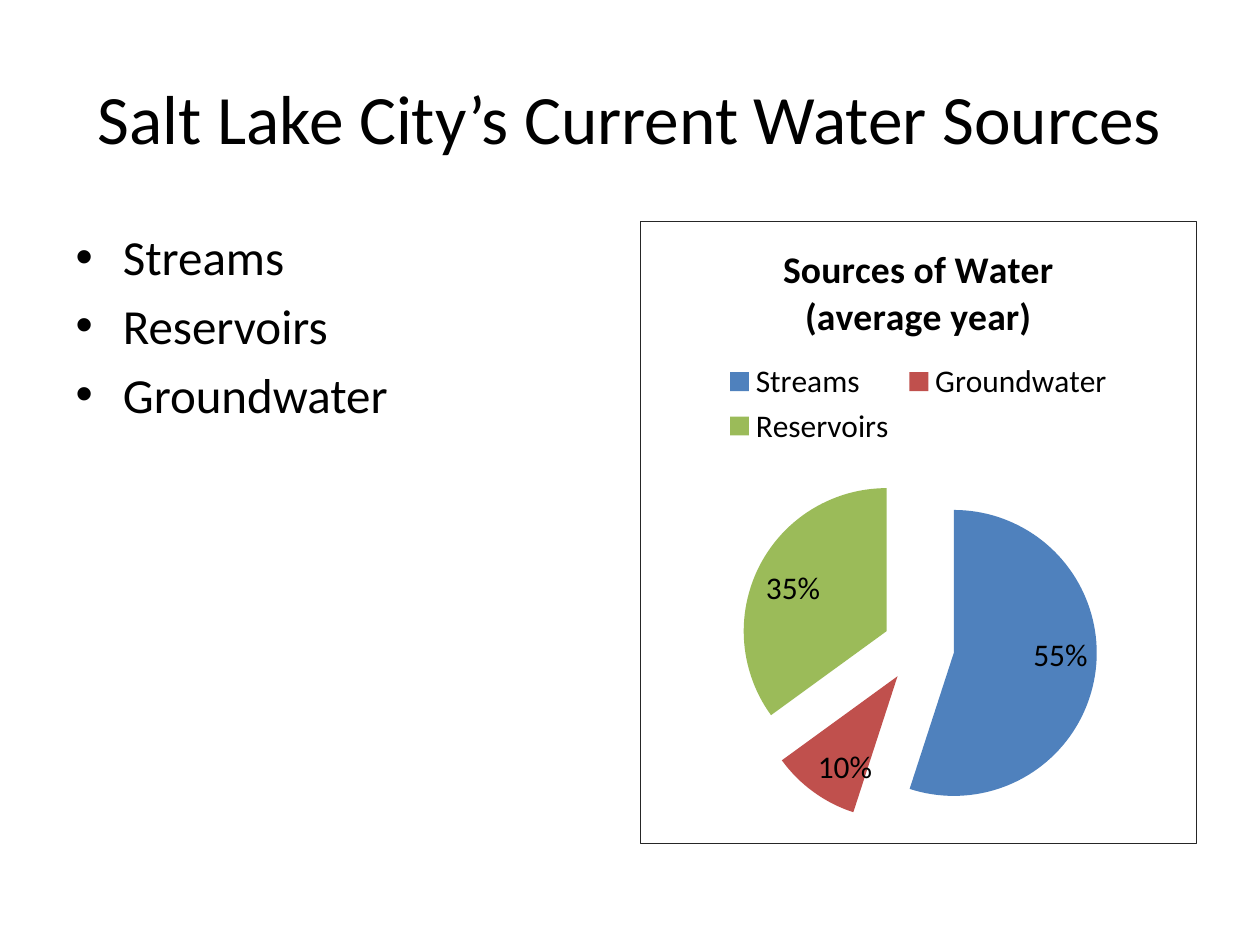
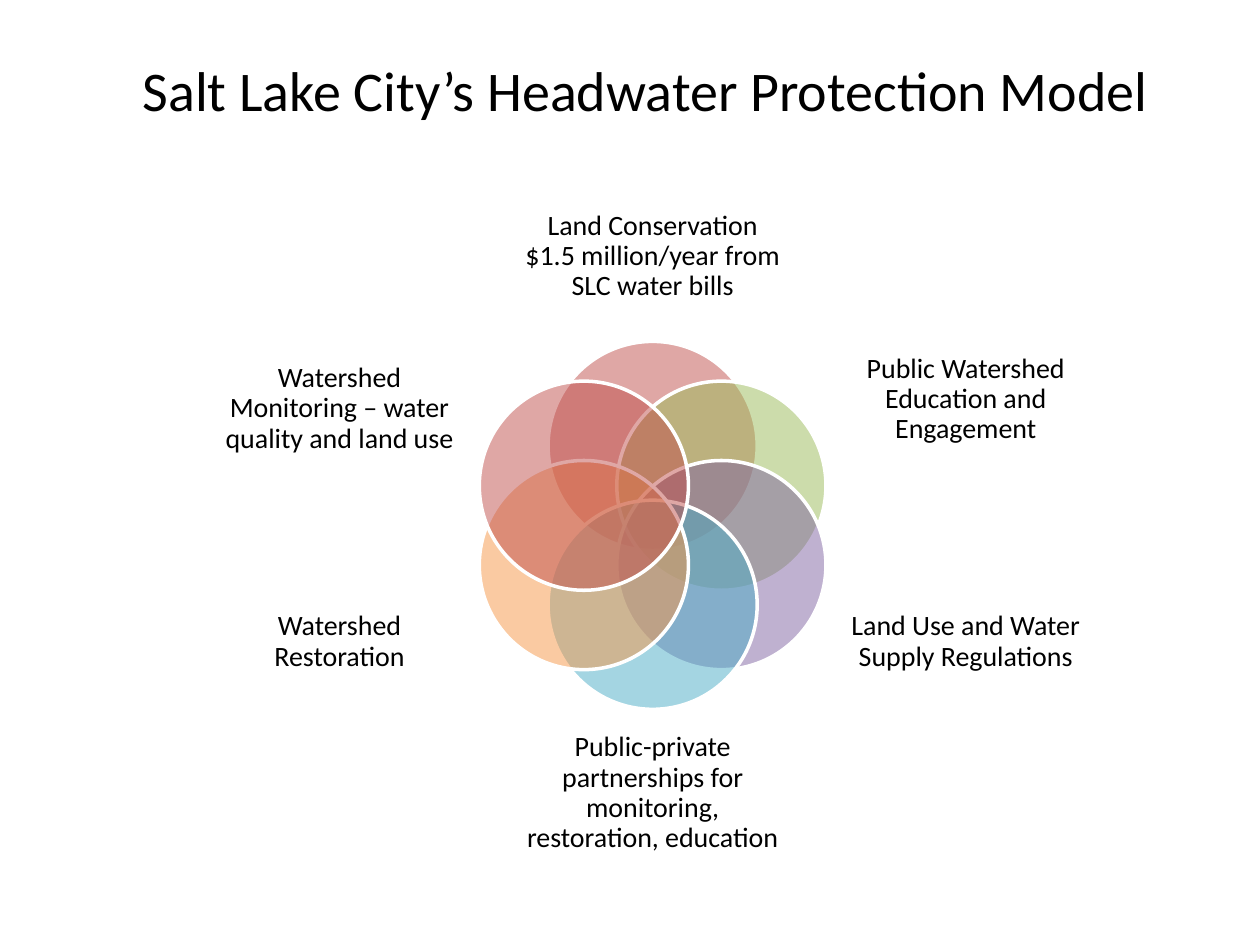
import math

import pptx
import pptx.chart.data
import pptx.dml.color
import pptx.enum.chart
import pptx.enum.shapes
import pptx.enum.text
import pptx.oxml
import pptx.oxml.ns
import pptx.util
from pptx.dml.color import RGBColor

Inches, Pt = pptx.util.Inches, pptx.util.Pt
qn = pptx.oxml.ns.qn
ANCHOR = pptx.enum.text.MSO_ANCHOR
ALIGN = pptx.enum.text.PP_ALIGN

# Shared style
FONT = "Calibri"
BLACK = RGBColor(0x00, 0x00, 0x00)
WHITE = RGBColor(0xFF, 0xFF, 0xFF)
BORDER = RGBColor(0x26, 0x26, 0x26)
BLUE = RGBColor(0x4F, 0x81, 0xBD)
RED = RGBColor(0xC0, 0x50, 0x4D)
GREEN = RGBColor(0x9B, 0xBB, 0x59)
PURPLE = RGBColor(0x80, 0x64, 0xA2)
AQUA = RGBColor(0x4B, 0xAC, 0xC6)
ORANGE = RGBColor(0xF7, 0x96, 0x46)

# Content: water sources
SOURCES_TITLE = "Salt Lake City’s Current Water Sources"
SOURCES = ["Streams", "Reservoirs", "Groundwater"]
CHART_TITLE = ["Sources of Water", "(average year)"]
SHARES = [("Streams", 55, BLUE), ("Groundwater", 10, RED), ("Reservoirs", 35, GREEN)]
EXPLOSION = 25

# Content: protection model, clockwise from the top
# (label, circle colour, column, top and height of the label)
MODEL_TITLE = "Salt Lake City’s Headwater Protection Model"
MODEL = [
    ("Land Conservation $1.5 million/year from SLC water bills", RED, "middle", 1.47, 1.13),
    ("Public Watershed Education and Engagement", GREEN, "right", 2.55, 1.24),
    ("Land Use and Water Supply Regulations", PURPLE, "right", 4.4, 1.39),
    ("Public-private partnerships for monitoring, restoration, education",
     AQUA, "middle", 5.73, 1.13),
    ("Watershed Restoration", ORANGE, "left", 4.4, 1.39),
    ("Watershed Monitoring – water quality and land use", RED, "left", 2.55, 1.39),
]

# Layout in inches
MARGIN, BODY_TOP, BODY_HEIGHT = 0.5, 1.75, 4.95
COLUMN_WIDTH, COLUMN_GAP = 4.42, 0.16
LABEL_COLUMNS = {"left": (1.71, 1.97), "middle": (4.14, 2.08), "right": (6.68, 1.97)}
RING_X, RING_Y, RING_RADIUS = 5.18, 4.17, 0.63
CIRCLE_SIZE = 1.66


def place(shape, left, top, width, height):
    shape.left, shape.top = Inches(left), Inches(top)
    shape.width, shape.height = Inches(width), Inches(height)


def set_font(font, size, bold=None):
    font.name, font.size, font.bold = FONT, Pt(size), bold
    font.color.rgb = BLACK


def add_titled_slide(presentation, layout, title, size, top, width):
    slide = presentation.slides.add_slide(presentation.slide_layouts[layout])
    place(slide.shapes.title, MARGIN, top, width, 1.25)
    frame = slide.shapes.title.text_frame
    frame.text = title
    frame.auto_size = pptx.enum.text.MSO_AUTO_SIZE.NONE
    frame.vertical_anchor = ANCHOR.MIDDLE
    set_font(frame.paragraphs[0].font, size)
    return slide


def add_source_chart(slide):
    data = pptx.chart.data.CategoryChartData()
    data.categories = [name for name, _, _ in SHARES]
    data.add_series("Series 1", [share for _, share, _ in SHARES])
    chart = slide.shapes.add_chart(
        pptx.enum.chart.XL_CHART_TYPE.PIE,
        Inches(MARGIN + COLUMN_WIDTH + COLUMN_GAP), Inches(BODY_TOP),
        Inches(COLUMN_WIDTH), Inches(BODY_HEIGHT), data).chart
    set_font(chart.font, 18)

    # Title and legend
    frame = chart.chart_title.text_frame
    frame.text = "\n".join(CHART_TITLE)
    for paragraph in frame.paragraphs:
        set_font(paragraph.font, 21.6, True)
    chart.has_legend = True
    chart.legend.position = pptx.enum.chart.XL_LEGEND_POSITION.TOP
    chart.legend.include_in_layout = False

    # Slices and their labels
    plot = chart.plots[0]
    plot.vary_by_categories = True
    series = plot.series[0]
    for index, (_, _, colour) in enumerate(SHARES):
        fill = series.points[index].format.fill
        fill.solid()
        fill.fore_color.rgb = colour
    labels = series.data_labels
    labels.show_percentage, labels.show_value = True, False
    labels.number_format, labels.number_format_is_linked = "0%", False
    labels.position = pptx.enum.chart.XL_LABEL_POSITION.INSIDE_END
    set_font(labels.font, 18)

    # Exploded slices and the chart frame
    namespaces = pptx.oxml.ns.nsdecls("c", "a")
    series._element.find(qn("c:dPt")).addprevious(
        pptx.oxml.parse_xml(f'<c:explosion {namespaces} val="{EXPLOSION}"/>'))
    chart._chartSpace.find(qn("c:txPr")).addprevious(pptx.oxml.parse_xml(
        f'<c:spPr {namespaces}><a:noFill/><a:ln w="{Pt(0.75)}"><a:solidFill>'
        f'<a:srgbClr val="{BORDER}"/></a:solidFill></a:ln></c:spPr>'))


def build_sources_slide(presentation):
    slide = add_titled_slide(presentation, 1, SOURCES_TITLE, 39.6, 0.3, 9)
    body = slide.placeholders[1]
    place(body, MARGIN, BODY_TOP, COLUMN_WIDTH, BODY_HEIGHT)
    body.text_frame.text = "\n".join(SOURCES)
    for paragraph in body.text_frame.paragraphs:
        set_font(paragraph.font, 28)
    add_source_chart(slide)


def add_circle(slide, index, colour):
    angle = math.radians(index * 360 / len(MODEL))
    left = RING_X + RING_RADIUS * math.sin(angle) - CIRCLE_SIZE / 2
    top = RING_Y - RING_RADIUS * math.cos(angle) - CIRCLE_SIZE / 2
    circle = slide.shapes.add_shape(
        pptx.enum.shapes.MSO_SHAPE.OVAL, Inches(left), Inches(top),
        Inches(CIRCLE_SIZE), Inches(CIRCLE_SIZE))
    circle.shadow.inherit = False
    circle.fill.solid()
    circle.fill.fore_color.rgb = colour
    solid_colour = circle._element.spPr.find(qn("a:solidFill")).find(qn("a:srgbClr"))
    solid_colour.append(pptx.oxml.parse_xml(
        f'<a:alpha {pptx.oxml.ns.nsdecls("a")} val="50000"/>'))
    circle.line.color.rgb = WHITE
    circle.line.width = Pt(2)


def add_label(slide, text, column, top, height):
    left, width = LABEL_COLUMNS[column]
    frame = slide.shapes.add_textbox(
        Inches(left), Inches(top), Inches(width), Inches(height)).text_frame
    frame.word_wrap = True
    frame.vertical_anchor = ANCHOR.MIDDLE
    frame.margin_left = frame.margin_right = frame.margin_top = frame.margin_bottom = 0
    frame.text = text
    paragraph = frame.paragraphs[0]
    paragraph.alignment = ALIGN.CENTER
    paragraph.line_spacing = 0.9
    paragraph.space_after = Pt(5.6)
    set_font(paragraph.font, 16)


def build_model_slide(presentation):
    slide = add_titled_slide(presentation, 5, MODEL_TITLE, 32, 0.08, 9.25)
    for index, (text, colour, column, top, height) in enumerate(MODEL):
        add_circle(slide, index, colour)
        add_label(slide, text, column, top, height)


def main():
    presentation = pptx.Presentation()
    presentation.slide_width, presentation.slide_height = Inches(10), Inches(7.5)
    build_sources_slide(presentation)
    build_model_slide(presentation)
    presentation.save("out.pptx")


if __name__ == "__main__":
    main()
